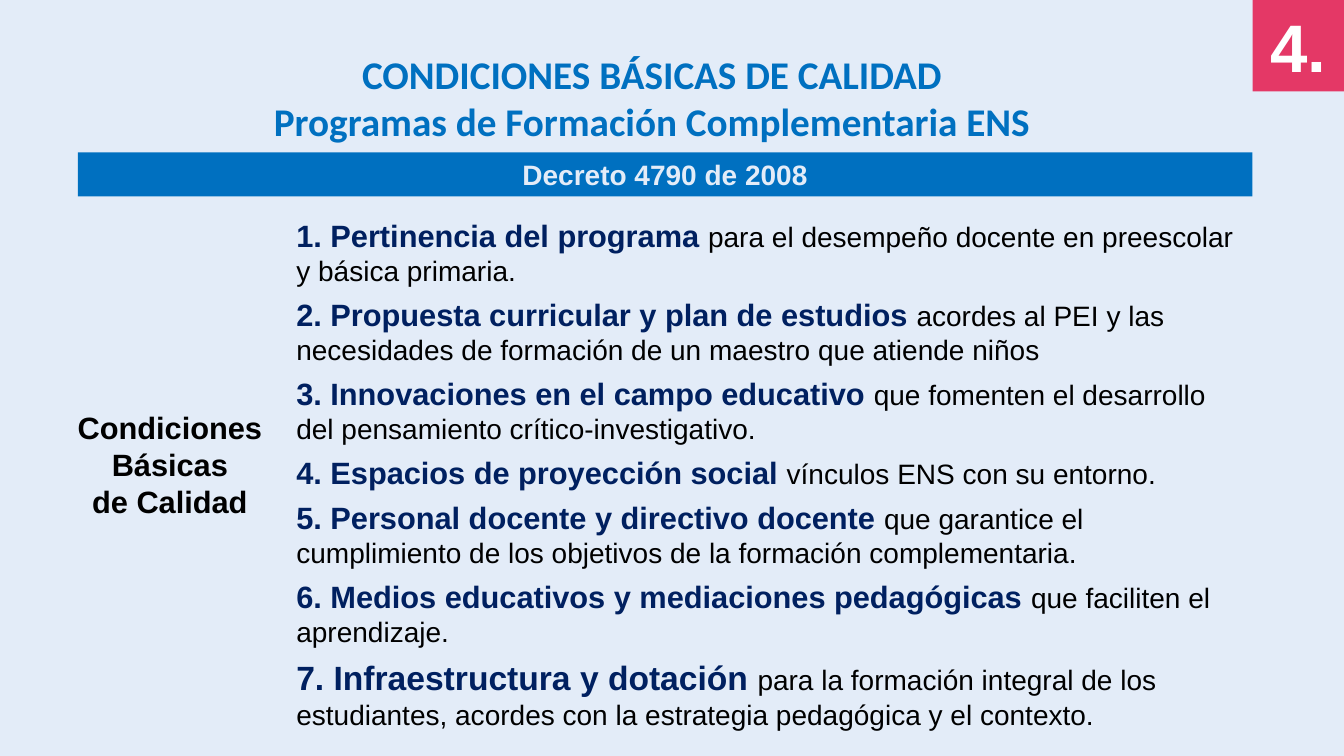
from pptx import Presentation
from pptx.dml.color import RGBColor
from pptx.enum.shapes import MSO_SHAPE
from pptx.enum.text import MSO_ANCHOR, PP_ALIGN
from pptx.util import Pt

COLORS = {
    "background": "E3ECF8",
    "badge": "E43866",
    "blue": "0070C0",
    "navy": "002060",
    "black": "000000",
    "white": "FFFFFF",
}


def write(shape, paragraphs, font="Arial", align=PP_ALIGN.CENTER,
          anchor=MSO_ANCHOR.TOP, space_after=0):
    """Fill a shape with paragraphs, each a list of (text, size, color, bold) runs."""
    frame = shape.text_frame
    frame.word_wrap = True
    frame.vertical_anchor = anchor
    for index, runs in enumerate(paragraphs):
        paragraph = frame.add_paragraph() if index else frame.paragraphs[0]
        paragraph.alignment = align
        if index < len(paragraphs) - 1:
            paragraph.space_after = Pt(space_after)
        for text, size, color, bold in runs:
            run = paragraph.add_run()
            run.text = text
            run.font.name = font
            run.font.size = Pt(size)
            run.font.bold = bold
            run.font.color.rgb = RGBColor.from_string(COLORS[color])


def add_block(left, top, width, height, color):
    block = slide.shapes.add_shape(
        MSO_SHAPE.RECTANGLE, Pt(left), Pt(top), Pt(width), Pt(height))
    block.shadow.inherit = False
    block.fill.solid()
    block.fill.fore_color.rgb = RGBColor.from_string(COLORS[color])
    block.line.fill.background()
    return block


presentation = Presentation()
presentation.slide_width = Pt(960)
presentation.slide_height = Pt(540)
slide = presentation.slides.add_slide(presentation.slide_layouts[6])
slide.background.fill.solid()
slide.background.fill.fore_color.rgb = RGBColor.from_string(COLORS["background"])

section_number = add_block(894.7, 0, 65.3, 65.3, "badge")
write(section_number, [[("4.", 48, "white", True)]], anchor=MSO_ANCHOR.MIDDLE)

decree = add_block(55.6, 108.8, 839, 31.5, "blue")
write(decree, [[("Decreto 4790 de 2008", 20, "background", True)]])

title = slide.shapes.add_textbox(Pt(55.6), Pt(32.4), Pt(820), Pt(75))
title_lines = ["CONDICIONES BÁSICAS DE CALIDAD",
               "Programas de Formación Complementaria ENS"]
write(title, [[(line, 28, "blue", True)] for line in title_lines], font="Calibri")

topic = slide.shapes.add_textbox(Pt(13.7), Pt(288.7), Pt(215.3), Pt(87))
topic_lines = ["Condiciones Básicas", "de Calidad"]
write(topic, [[(line, 22, "black", True)] for line in topic_lines])

conditions = [
    ("1. Pertinencia del programa ", 22,
     "para el desempeño docente en preescolar y básica primaria."),
    ("2. Propuesta curricular y plan de estudios ", 22,
     "acordes al PEI y las necesidades de formación de un maestro que atiende niños"),
    ("3. Innovaciones en el campo educativo ", 22,
     "que fomenten el desarrollo del pensamiento crítico-investigativo."),
    ("4. Espacios de proyección social ", 22,
     "vínculos ENS con su entorno."),
    ("5. Personal docente y directivo docente ", 22,
     "que garantice el cumplimiento de los objetivos de la formación complementaria."),
    ("6. Medios educativos y mediaciones pedagógicas ", 22,
     "que faciliten el aprendizaje."),
    ("7. Infraestructura y dotación ", 24,
     "para la formación integral de los estudiantes, acordes con la estrategia "
     "pedagógica y el contexto."),
]
condition_list = slide.shapes.add_textbox(Pt(204.6), Pt(151.2), Pt(690), Pt(378))
write(condition_list,
      [[(heading, size, "navy", True), (detail, 20, "black", False)]
       for heading, size, detail in conditions],
      align=PP_ALIGN.LEFT, space_after=6)

presentation.save("out.pptx")
